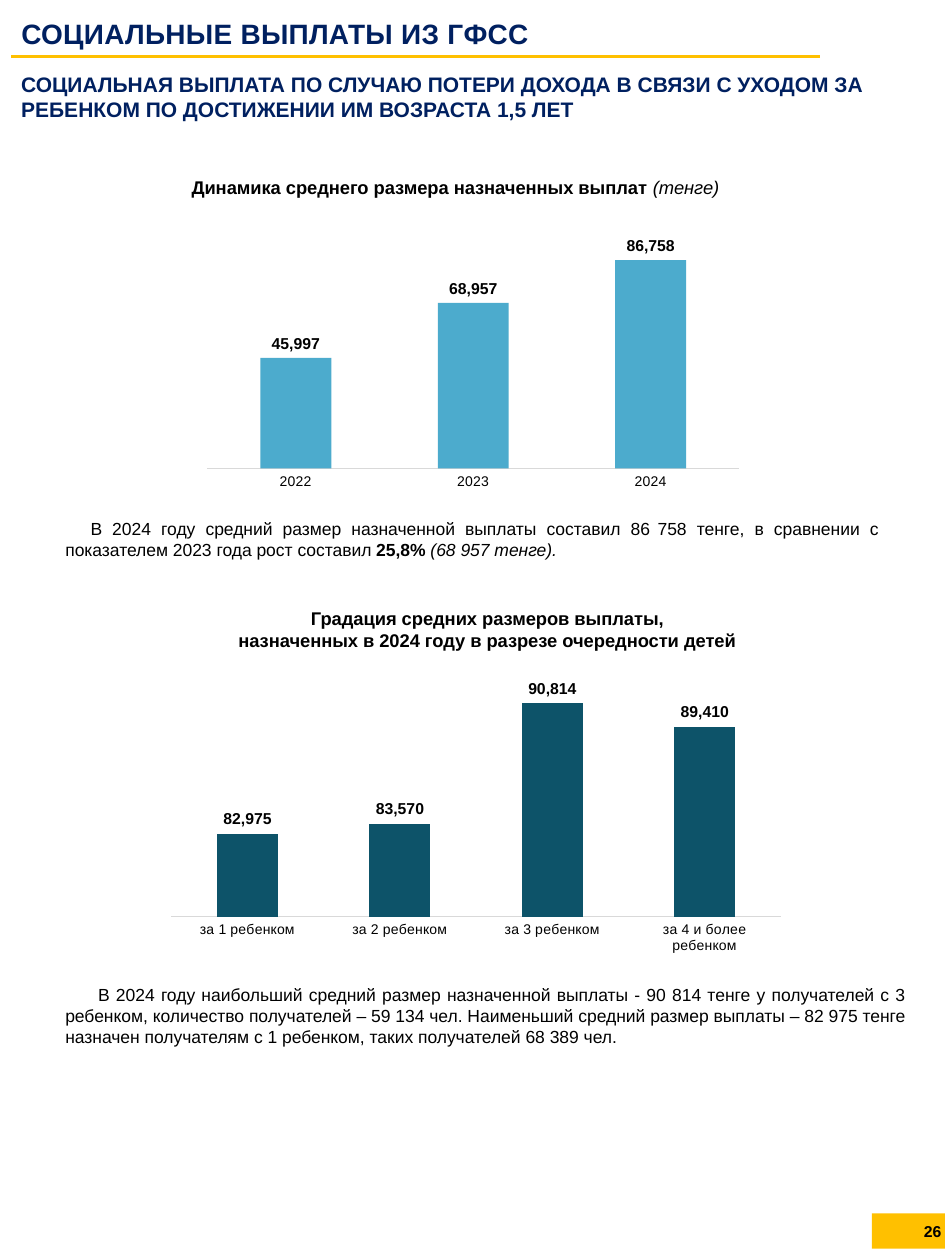
from dataclasses import dataclass
from typing import Optional

from lxml.etree import SubElement
from pptx import Presentation
from pptx.chart.data import CategoryChartData
from pptx.dml.color import RGBColor
from pptx.enum.chart import XL_CHART_TYPE as CT, XL_LABEL_POSITION as LP, XL_TICK_MARK as TM
from pptx.enum.shapes import MSO_CONNECTOR as CONN, MSO_SHAPE as SHAPE
from pptx.enum.text import MSO_ANCHOR as ANCHOR, MSO_AUTO_SIZE as AUTO, PP_ALIGN as ALIGN
from pptx.oxml.ns import qn
from pptx.util import Inches, Pt

NAVY = RGBColor(0x00, 0x20, 0x60)
GOLD = RGBColor(0xFF, 0xC0, 0x00)
BLUE = RGBColor(0x00, 0x88, 0xB8)
TEAL = RGBColor(0x0D, 0x53, 0x69)
GREY = RGBColor(0xD9, 0xD9, 0xD9)
BLACK = RGBColor(0, 0, 0)
WHITE = RGBColor(255, 255, 255)
FONT = "Arial"
NUMBER = "#,##0"


@dataclass
class Run:
    text: str
    bold: Optional[bool] = None
    italic: Optional[bool] = None
    size: Optional[float] = None


@dataclass
class TextBlock:
    box: tuple[float, float, float, float]
    paragraphs: list[list[Run]]
    size: float
    color: RGBColor = BLACK
    bold: Optional[bool] = None
    align: ALIGN = ALIGN.LEFT
    indent: float = 0
    wrap: bool = True
    anchor: ANCHOR = ANCHOR.TOP
    auto: AUTO = AUTO.SHAPE_TO_FIT_TEXT
    fill: Optional[RGBColor] = None


@dataclass
class BarChart:
    box: tuple[float, float, float, float]
    values: dict[str, int]
    color: RGBColor
    plot: tuple[float, float, float, float]
    low: int
    high: int
    opacity: int = 100


CHARTS = [
    BarChart((1.5, 1.67, 4.49, 2.28),
             {"2022": 45997, "2023": 68957, "2024": 86758},
             BLUE, (0.032, 0.063, 0.941, 0.835), 0, 100000, opacity=70),
    BarChart((1.26, 5.38, 5.04, 2.23),
             {"за 1 ребенком": 82975, "за 2 ребенком": 83570,
              "за 3 ребенком": 90814, "за 4 и более ребенком": 89410},
             TEAL, (0.02, 0.02, 0.96, 0.83), 78000, 92000),
]

HEADING = TextBlock((0.15, 0.11, 7.19, 0.29), [[Run("СОЦИАЛЬНЫЕ ВЫПЛАТЫ ИЗ ГФСС")]],
                    16, NAVY, bold=True)

BLOCKS = [
    TextBlock((0.07, 0.52, 7.05, 0.5),
              [[Run("СОЦИАЛЬНАЯ ВЫПЛАТА ПО СЛУЧАЮ ПОТЕРИ ДОХОДА В СВЯЗИ С УХОДОМ ЗА "
                    "РЕБЕНКОМ ПО ДОСТИЖЕНИИ ИМ ВОЗРАСТА 1,5 ЛЕТ")]],
              12, NAVY, bold=True, fill=WHITE),
    TextBlock((0.72, 1.35, 5.13, 0.28),
              [[Run("Динамика среднего размера назначенных выплат ", bold=True),
                Run("(тенге)", italic=True)]],
              10.5, align=ALIGN.CENTER, indent=0.66, wrap=False),
    TextBlock((0.42, 4.06, 6.65, 0.44),
              [[Run("В 2024 году средний размер назначенной выплаты составил 86"),
                Run(" ", size=5),
                Run("758 тенге, в сравнении с показателем 2023 года рост составил "),
                Run("25,8% ", bold=True),
                Run("(68 957 тенге).", italic=True)]],
              10, align=ALIGN.JUSTIFY, indent=0.2),
    TextBlock((0.01, 4.77, 7.06, 0.45),
              [[Run("Градация средних размеров выплаты,")],
               [Run("назначенных в 2024 году в разрезе очередности детей")]],
              10.5, bold=True, align=ALIGN.CENTER, indent=0.66),
    TextBlock((0.42, 7.76, 6.86, 0.6),
              [[Run("В 2024 году наибольший средний размер назначенной выплаты - 90 814 тенге "
                    "у получателей с 3 ребенком, количество получателей – 59 134 чел. "
                    "Наименьший средний размер выплаты – 82 975 тенге назначен получателям "
                    "с 1 ребенком, таких получателей 68 389 чел.")]],
              10, align=ALIGN.JUSTIFY, indent=0.26),
]

PAGE_NUMBER = TextBlock((5.88, 9.51, 1.69, 0.53), [[Run("26")]], 9, bold=True,
                        align=ALIGN.RIGHT, anchor=ANCHOR.MIDDLE, auto=AUTO.NONE)


def add_rect(s, box: tuple, fill: RGBColor):
    sp = s.shapes.add_shape(SHAPE.RECTANGLE, *map(Inches, box))
    sp.shadow.inherit = False
    sp.fill.solid()
    sp.fill.fore_color.rgb = fill
    sp.line.fill.background()
    return sp


def add_text(s, block: TextBlock):
    if block.fill is None:
        sp = s.shapes.add_textbox(*map(Inches, block.box))
    else:
        sp = add_rect(s, block.box, block.fill)
    tf = sp.text_frame
    tf.word_wrap = block.wrap
    tf.auto_size = block.auto
    tf.vertical_anchor = block.anchor
    for i, runs in enumerate(block.paragraphs):
        p = tf.add_paragraph() if i else tf.paragraphs[0]
        p.alignment = block.align
        p.font.name = FONT
        p.font.size = Pt(block.size)
        p.font.bold = block.bold
        p.font.color.rgb = block.color
        if block.indent:
            p_pr = p._p.get_or_add_pPr()
            p_pr.set("marL", "0")
            p_pr.set("indent", str(Inches(block.indent)))
        for run in runs:
            r = p.add_run()
            r.text = run.text
            r.font.bold = run.bold
            r.font.italic = run.italic
            if run.size:
                r.font.size = Pt(run.size)
    return sp


def add_heading(s, block: TextBlock) -> None:
    tf = add_text(s, block).text_frame
    tf.margin_left = tf.margin_right = tf.margin_bottom = 0
    tf.margin_top = Inches(0.02)
    p = tf.paragraphs[0]
    p.space_before = Pt(1.3)
    p._p.get_or_add_pPr().set("marL", str(Inches(0.02)))
    p.runs[0].font._element.set("spc", "20")


def set_font(font, size: float, bold: bool = False) -> None:
    font.name = FONT
    font.size = Pt(size)
    font.bold = bold
    font.color.rgb = BLACK


def add_chart(s, spec: BarChart) -> None:
    data = CategoryChartData(number_format=NUMBER)
    data.categories = list(spec.values)
    data.add_series("Series 1", list(spec.values.values()))
    chart = s.shapes.add_chart(CT.COLUMN_CLUSTERED, *map(Inches, spec.box), data).chart
    chart.has_legend = False
    chart.has_title = False
    set_font(chart.font, 10)

    cat_axis, val_axis = chart.category_axis, chart.value_axis
    cat_axis.major_tick_mark = TM.NONE
    cat_axis.format.line.color.rgb = GREY
    cat_axis.format.line.width = Pt(0.75)
    set_font(cat_axis.tick_labels.font, 8)
    val_axis.visible = False
    val_axis.has_major_gridlines = False
    val_axis.minimum_scale = spec.low
    val_axis.maximum_scale = spec.high

    plot = chart.plots[0]
    plot.gap_width = 150
    plot.overlap = -27
    plot.vary_by_categories = False
    plot.has_data_labels = True
    labels = plot.data_labels
    labels.show_value = True
    labels.position = LP.OUTSIDE_END
    labels.number_format = NUMBER
    labels.number_format_is_linked = False
    set_font(labels.font, 9, bold=True)

    fill = plot.series[0].format.fill
    fill.solid()
    fill.fore_color.rgb = spec.color
    if spec.opacity < 100:
        color = plot.series[0]._element.find(".//" + qn("a:srgbClr"))
        SubElement(color, qn("a:alpha"), val=str(spec.opacity * 1000))

    area = chart._chartSpace.chart.plotArea
    layout = area.find(qn("c:layout"))
    if layout is None:
        layout = SubElement(area, qn("c:layout"))
        area.insert(0, layout)
    manual = SubElement(layout, qn("c:manualLayout"))
    settings = [("layoutTarget", "inner"), ("xMode", "edge"), ("yMode", "edge")]
    for tag, value in settings + list(zip("xywh", spec.plot)):
        SubElement(manual, qn(f"c:{tag}"), val=str(value))


def add_rule(s, left: float, right: float, y: float) -> None:
    line = s.shapes.add_connector(CONN.STRAIGHT, *map(Inches, (left, y, right, y)))
    line.line.color.rgb = GOLD
    line.line.width = Pt(1.5)
    SubElement(line._element.spPr, qn("a:effectLst"))


def main() -> None:
    prs = Presentation()
    prs.slide_width, prs.slide_height = Inches(7.5), Inches(10)
    s = prs.slides.add_slide(prs.slide_layouts[6])
    for spec in CHARTS:
        add_chart(s, spec)
    add_heading(s, HEADING)
    for block in BLOCKS:
        add_text(s, block)
    add_rule(s, 0.09, 6.51, 0.45)
    add_rect(s, (6.92, 9.63, 0.59, 0.28), GOLD)
    add_text(s, PAGE_NUMBER)
    prs.save("out.pptx")


if __name__ == "__main__":
    main()
